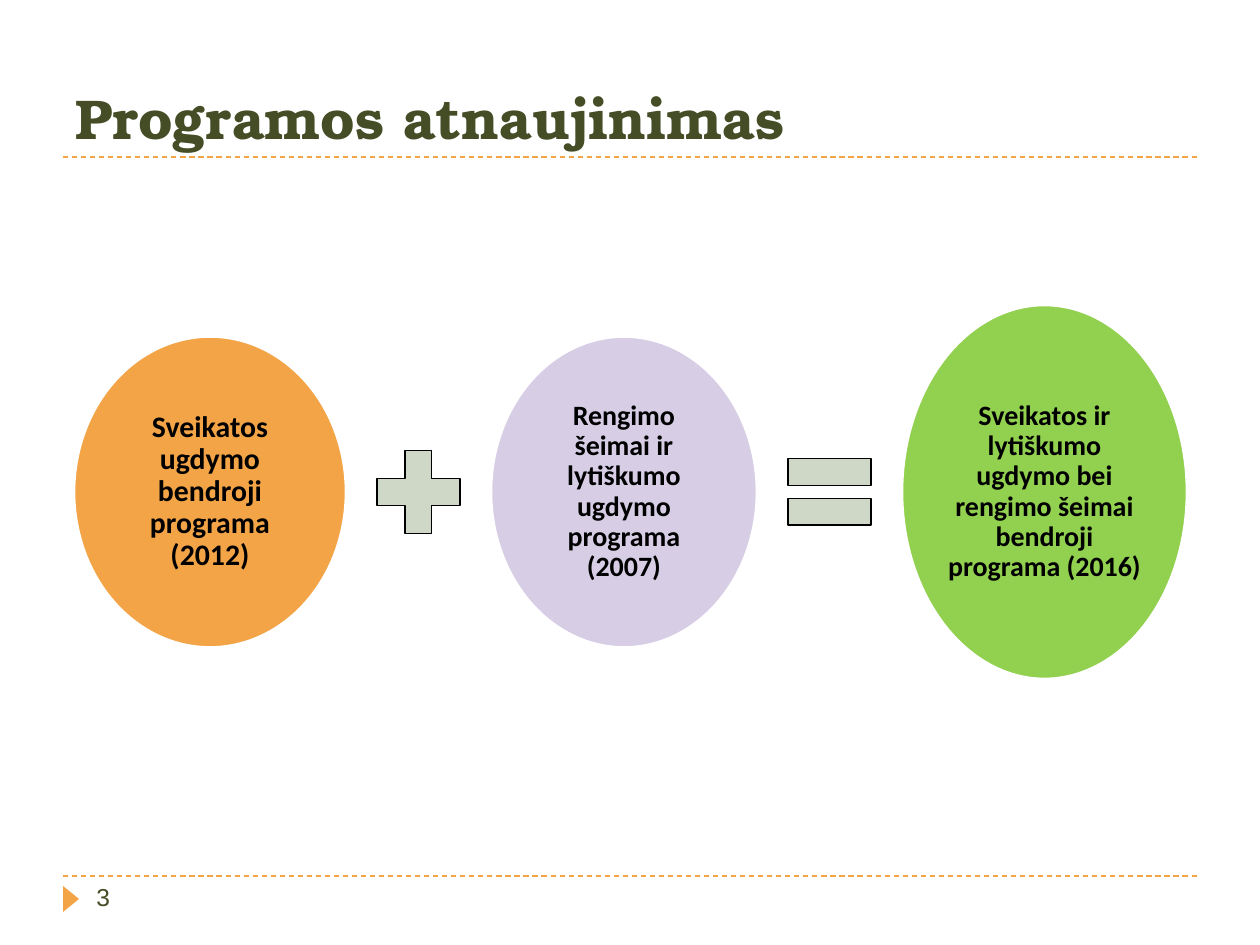
from dataclasses import dataclass

from lxml.etree import SubElement
from pptx import Presentation
from pptx.dml.color import RGBColor as Rgb
from pptx.enum.dml import MSO_LINE as Dash
from pptx.enum.shapes import MSO_CONNECTOR as Conn, MSO_SHAPE as Geo
from pptx.enum.text import MSO_ANCHOR as Anchor, PP_ALIGN as Align
from pptx.oxml.ns import qn
from pptx.util import Pt


@dataclass(frozen=True)
class Theme:
    orange: str = "F3A447"
    lilac: str = "D7CEE6"
    green: str = "92D050"
    sage: str = "CFD7C7"
    olive: str = "444D26"
    black: str = "000000"
    white: str = "FFFFFF"
    head: str = "TeX Gyre Bonum"
    body: str = "Calibri"
    foot: str = "Arial"
    title: int = 32
    large: int = 17
    small: int = 16
    page: int = 14


T = Theme()
MID, GAP, SIGN = 492, 16, 113  # row centre, space between items, sign size


def px(n):
    return round(n * 914400 / 126)


def write(shape, text, font, size, color, bold=False, align=Align.LEFT,
          anchor=Anchor.TOP, inset=None, lead=None):
    frame = shape.text_frame
    frame.word_wrap = True
    frame.vertical_anchor = anchor
    if inset is not None:
        frame.margin_left = frame.margin_right = px(inset)
        frame.margin_top = frame.margin_bottom = px(inset)
    para = frame.paragraphs[0]
    para.alignment = align
    if lead:
        para.line_spacing = lead
    run = para.add_run()
    run.text = text
    run.font.name, run.font.size, run.font.bold = font, Pt(size), bold
    run.font.color.rgb = Rgb.from_string(color)


def label(slide, box, text, **style):
    write(slide.shapes.add_textbox(*map(px, box)), text, **style)


def shape(slide, kind, box, fill, line=None, width=0.75):
    item = slide.shapes.add_shape(kind, *map(px, box))
    item.shadow.inherit = False
    item.fill.solid()
    item.fill.fore_color.rgb = Rgb.from_string(fill)
    if line:
        item.line.color.rgb = Rgb.from_string(line)
        item.line.width = Pt(width)
    else:
        item.line.fill.background()
    return item


def rule(slide, y):
    line = slide.shapes.add_connector(
        Conn.STRAIGHT, px(63), px(y), px(1197), px(y))
    line.line.color.rgb = Rgb.from_string(T.orange)
    line.line.width = Pt(0.75)
    line.line.dash_style = Dash.DASH
    SubElement(line._element.spPr, qn("a:effectLst"))


def oval(slide, x, wide, high, fill, size, text):
    item = shape(slide, Geo.OVAL, (x, MID - high / 2, wide, high),
                 fill, T.white, 1.5)
    write(item, text, T.body, size, T.black, bold=True, align=Align.CENTER,
          anchor=Anchor.MIDDLE, inset=3, lead=0.9)


def sign(slide, x, kind):
    shape(slide, kind, (x, MID - SIGN / 2, SIGN, SIGN), T.sage, T.black)


def sum_row(slide):
    # Each programme is followed by its sign, if it has one
    terms = (
        (272, 311, T.orange, T.large,
         "Sveikatos ugdymo bendroji programa (2012)", Geo.MATH_PLUS),
        (266, 311, T.lilac, T.small,
         "Rengimo šeimai ir lytiškumo ugdymo programa (2007)",
         Geo.MATH_EQUAL),
        (285, 374, T.green, T.small,
         "Sveikatos ir lytiškumo ugdymo bei rengimo šeimai bendroji "
         "programa (2016)", None),
    )
    x = 74
    for wide, high, fill, size, text, kind in terms:
        oval(slide, x, wide, high, fill, size, text)
        x += wide + GAP
        if kind:
            sign(slide, x, kind)
            x += SIGN + GAP


def main():
    deck = Presentation()
    deck.slide_width, deck.slide_height = px(1260), px(945)
    slide = deck.slides.add_slide(deck.slide_layouts[6])

    # Frame: dashed rules and page marker
    for y in (876, 157):
        rule(slide, y)
    shape(slide, Geo.ISOSCELES_TRIANGLE, (58, 891, 26, 16),
          T.orange).rotation = 90

    # Title and page number
    label(slide, (63, 21, 1134, 136), "Programos atnaujinimas", font=T.head,
          size=T.title, color=T.olive, bold=True, anchor=Anchor.BOTTOM)
    label(slide, (84, 876, 273, 50), "3", font=T.foot, size=T.page,
          color=T.olive)

    # Programmes added together
    sum_row(slide)
    deck.save("out.pptx")


if __name__ == "__main__":
    main()
